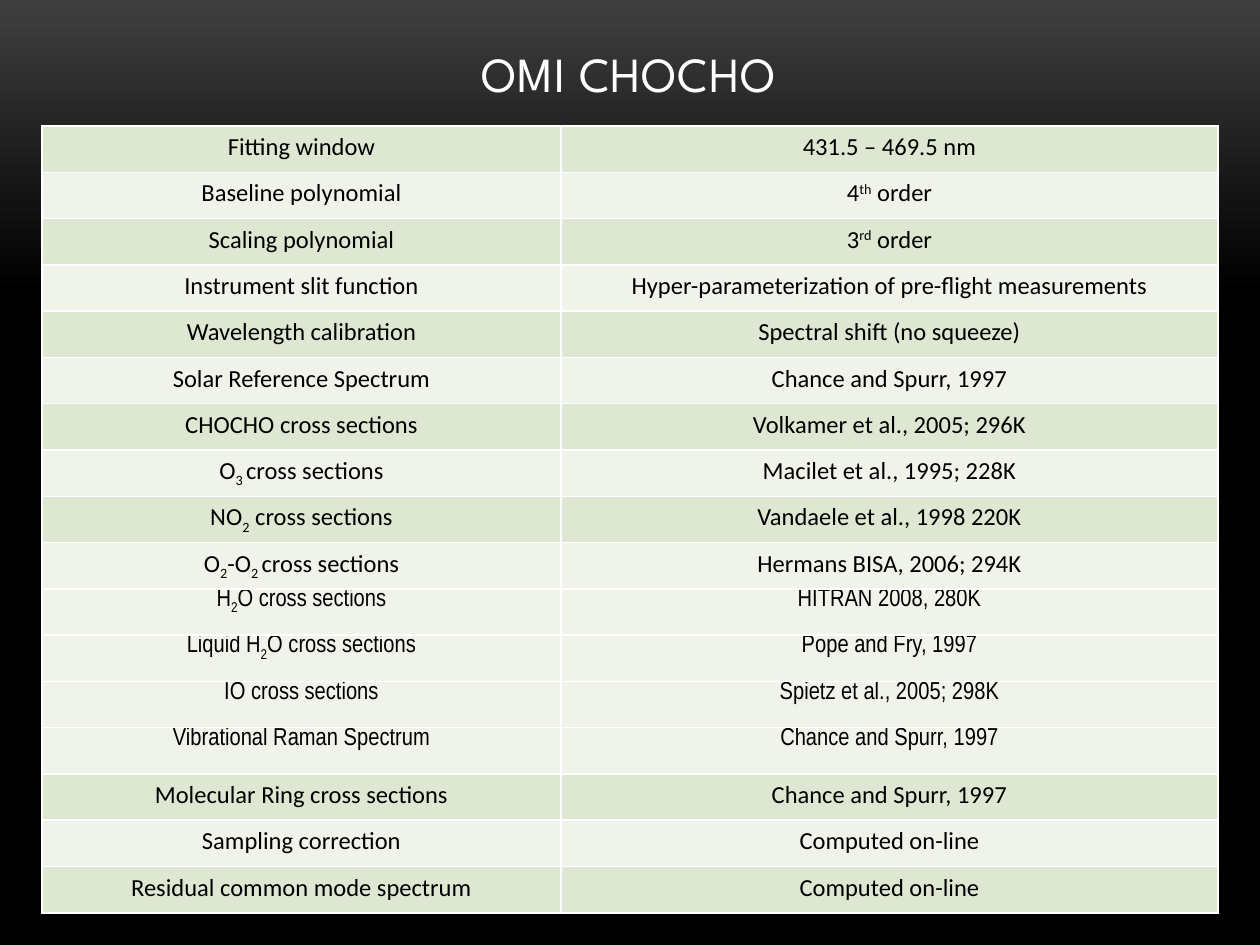
import copy
import pptx
import pptx.util
import pptx.dml.color
import pptx.enum.text
import pptx.oxml.ns
import lxml.etree

TITLE = "OMI CHOCHO"
ROWS = [
    ("Fitting window", "431.5 – 469.5 nm"),
    ("Baseline polynomial", "4^th^ order"),
    ("Scaling polynomial", "3^rd^ order"),
    ("Instrument slit function", "Hyper-parameterization of pre-flight measurements"),
    ("Wavelength calibration", "Spectral shift (no squeeze)"),
    ("Solar Reference Spectrum", "Chance and Spurr, 1997"),
    ("CHOCHO cross sections", "Volkamer et al., 2005; 296K"),
    ("O~3 ~cross sections", "Macilet et al., 1995; 228K"),
    ("NO~2~ cross sections", "Vandaele et al., 1998 220K"),
    ("O~2~-O~2 ~cross sections", "Hermans BISA, 2006; 294K"),
    ("H~2~O cross sections", "HITRAN 2008, 280K"),
    ("Liquid H~2~O cross sections", "Pope and Fry, 1997"),
    ("IO cross sections", "Spietz et al., 2005; 298K"),
    ("Vibrational Raman Spectrum", "Chance and Spurr, 1997"),
    ("Molecular Ring cross sections", "Chance and Spurr, 1997"),
    ("Sampling correction", "Computed on-line"),
    ("Residual common mode spectrum", "Computed on-line"),
]
NARROW = range(10, 14)
COLS = (519, 657)
HEX = {"top": "3F3F3F", "black": "000000", "white": "FFFFFF",
       "dark": "DEE7D1", "light": "EFF3EA"}
SHIFT = {"^": 30000, "~": -25000}
qn = pptx.oxml.ns.qn


def px(n):
    return round(n * 914400 / 126)


def rgb(name):
    return pptx.dml.color.RGBColor.from_string(HEX[name])


def write(frame, text, size=14, face="Calibri", color="black", space=None):
    para = frame.paragraphs[0]
    para.alignment = pptx.enum.text.PP_ALIGN.CENTER
    mark = "^" if "^" in text else "~"
    for i, part in enumerate(text.split(mark)):
        run = para.add_run()
        run.text = part
        run.font.size = pptx.util.Pt(size)
        run.font.name = face
        run.font.color.rgb = rgb(color)
        props = run.font._element
        if i % 2:
            props.set("baseline", str(SHIFT[mark]))
        if space:
            props.set("spc", str(space))


def rule(cell, sides):
    props = cell._tc.get_or_add_tcPr()
    for i, side in enumerate(sides):
        line = lxml.etree.Element(qn("a:ln" + side), w="12700")
        fill = lxml.etree.SubElement(line, qn("a:solidFill"))
        lxml.etree.SubElement(fill, qn("a:srgbClr"), val=HEX["white"])
        props.insert(i, line)


def paint(slide):
    fill = slide.background.fill
    fill.gradient()
    fill.gradient_angle = 270
    for stop, name, place in zip(fill.gradient_stops, ("top", "black"), (0, 0.31)):
        stop.color.rgb = rgb(name)
        stop.position = place
    stops = next(slide.element.iter(qn("a:gsLst")))
    last = copy.deepcopy(stops[-1])
    last.set("pos", "100000")
    stops.append(last)


def grid(slide):
    high = px(787) // len(ROWS)
    shape = slide.shapes.add_table(len(ROWS), len(COLS), px(42), px(126),
                                   px(sum(COLS)), high * len(ROWS))
    table = shape.table
    table.first_row = False
    table.horz_banding = False
    for col, wide in zip(table.columns, COLS):
        col.width = px(wide)
    for r, row in enumerate(ROWS):
        table.rows[r].height = high
        thin = r in NARROW
        for c, text in enumerate(row):
            cell = table.cell(r, c)
            if thin:
                cell.margin_top = cell.margin_bottom = 0
            cell.fill.solid()
            cell.fill.fore_color.rgb = rgb("light" if thin or r % 2 else "dark")
            sides = "R" if c == 0 else "L"
            sides += "T" if r else ""
            sides += "B" if r < len(ROWS) - 1 else ""
            rule(cell, sides)
            write(cell.text_frame, text, face="Arial Narrow" if thin else "Calibri")


def main():
    deck = pptx.Presentation()
    deck.slide_width, deck.slide_height = px(1260), px(945)
    slide = deck.slides.add_slide(deck.slide_layouts[6])
    paint(slide)
    grid(slide)
    frame = slide.shapes.add_textbox(px(197), px(21), px(864), px(88)).text_frame
    frame.word_wrap = True
    frame.vertical_anchor = pptx.enum.text.MSO_ANCHOR.BOTTOM
    write(frame, TITLE, size=28, face="League Spartan", color="white", space=50)
    deck.save("out.pptx")


if __name__ == "__main__":
    main()
